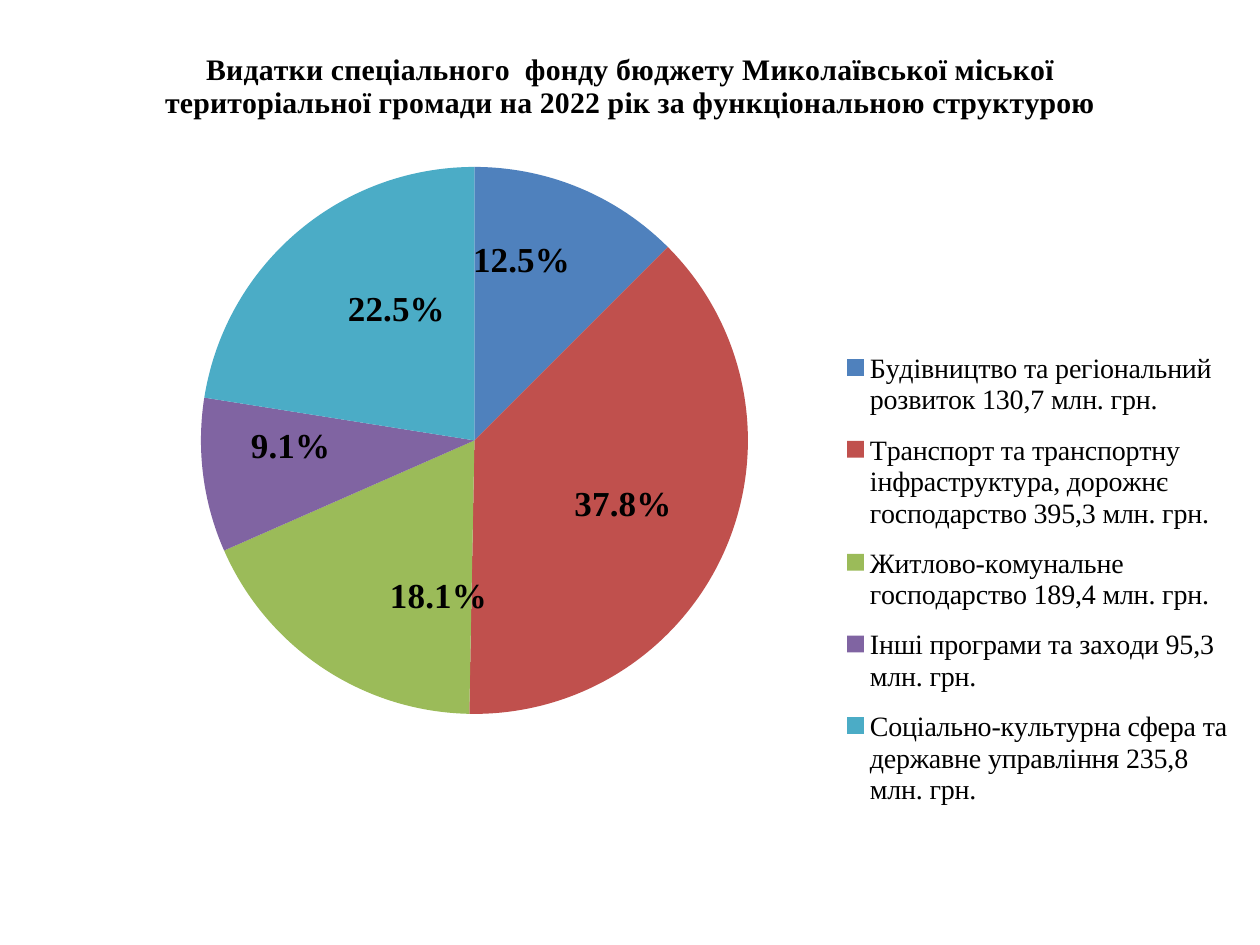
"""Build a slide with a pie chart of special fund spending."""
from dataclasses import dataclass

from lxml import etree
from pptx import Presentation
from pptx import util as u
from pptx.chart import data as chart_data
from pptx.dml import color
from pptx.enum import chart as kinds
from pptx.oxml import ns

EMU_PER_PX = 914400 / 126
SERIF = "Times New Roman"
TITLE = ("Видатки спеціального  фонду бюджету Миколаївської міської "
         "територіальної громади на 2022 рік за функціональною структурою")
COLORS = {
    "text": "000000",
    "construction": "4F81BD",
    "transport": "C0504D",
    "housing": "9BBB59",
    "other": "8064A2",
    "social": "4BACC6",
}


@dataclass(frozen=True)
class Box:
    left: int
    top: int
    width: int
    height: int


@dataclass(frozen=True)
class Sector:
    name: str
    share: float
    fill: str
    shift: tuple[int, int]


CHART = Box(20, 20, 1221, 925)
PLOT = Box(31, 147, 847, 547)
LEGEND = Box(825, 315, 393, 490)
SECTORS = [
    Sector("Будівництво та регіональний розвиток 130,7 млн. грн.",
           12.5, "construction", (-5, -53)),
    Sector("Транспорт та транспортну інфраструктура, дорожнє господарство 395,3 млн. грн.",
           37.8, "transport", (23, 11)),
    Sector("Житлово-комунальне господарство 189,4 млн. грн.",
           18.1, "housing", (40, 42)),
    Sector("Інші програми та заходи 95,3 млн. грн.",
           9.1, "other", (-48, -11)),
    Sector("Соціально-культурна сфера та державне управління 235,8 млн. грн.",
           22.5, "social", (11, -27)),
]


def px(length: int) -> u.Emu:
    """Turn pixels into EMU."""
    return u.Emu(round(length * EMU_PER_PX))


def rgb(name: str) -> color.RGBColor:
    """Look up a named colour."""
    return color.RGBColor.from_string(COLORS[name])


def style(font, size: int, bold: bool = False, face: str = SERIF) -> None:
    """Set the look of a chart font."""
    font.name = face
    font.size = u.Pt(size)
    font.bold = bold
    font.color.rgb = rgb("text")


def place(parent, index: int, settings: dict[str, object]) -> None:
    """Give a chart part a manual layout."""
    for old in parent.findall(ns.qn("c:layout")):
        parent.remove(old)
    layout = etree.Element(ns.qn("c:layout"))
    manual = etree.SubElement(layout, ns.qn("c:manualLayout"))
    for tag, value in settings.items():
        etree.SubElement(manual, ns.qn(f"c:{tag}")).set("val", str(value))
    parent.insert(index, layout)


def frame(box: Box) -> dict[str, object]:
    """Express a box as fractions of the chart area."""
    return {
        "xMode": "edge", "yMode": "edge",
        "x": round(box.left / CHART.width, 4),
        "y": round(box.top / CHART.height, 4),
        "w": round(box.width / CHART.width, 4),
        "h": round(box.height / CHART.height, 4),
    }


def draw_sector(point, sector: Sector) -> None:
    """Colour one sector and set its percentage label."""
    point.format.fill.solid()
    point.format.fill.fore_color.rgb = rgb(sector.fill)
    label = point.data_label
    style(label.font, 20, bold=True)
    label.position = kinds.XL_LABEL_POSITION.CENTER
    node = label.font._element.getparent()
    while node.tag != ns.qn("c:dLbl"):
        node = node.getparent()
    node.find(ns.qn("c:showVal")).set("val", "0")
    node.find(ns.qn("c:showPercent")).set("val", "1")
    across, down = sector.shift
    place(node, 1, {"x": round(across / CHART.width, 4),
                    "y": round(down / CHART.height, 4)})
    number = etree.Element(ns.qn("c:numFmt"))
    number.set("formatCode", "0.0%")
    number.set("sourceLinked", "0")
    node.insert(2, number)


def draw_title(chart) -> None:
    """Write the chart title over the plot."""
    chart.has_title = True
    para = chart.chart_title.text_frame.paragraphs[0]
    span = para.add_run()
    span.text = TITLE
    style(span.font, 17, bold=True)
    chart.chart_title._element.get_or_add_overlay().set("val", "1") if hasattr(
        chart.chart_title._element, "get_or_add_overlay") else None


def draw_chart(page) -> None:
    """Add the pie chart with its title, labels and legend."""
    shares = chart_data.CategoryChartData()
    shares.categories = [sector.name for sector in SECTORS]
    shares.add_series("Series 1", [sector.share for sector in SECTORS])
    chart = page.shapes.add_chart(
        kinds.XL_CHART_TYPE.PIE, px(CHART.left), px(CHART.top),
        px(CHART.width), px(CHART.height), shares).chart
    style(chart.font, 10, face="Calibri")
    draw_title(chart)

    plot = chart.plots[0]
    plot.vary_by_categories = True
    series = plot.series[0]
    for index, sector in enumerate(SECTORS):
        draw_sector(series.points[index], sector)
    labels = series.data_labels
    labels.show_value = False
    labels.show_percentage = True
    labels.number_format = "0.0%"
    labels.number_format_is_linked = False
    style(labels.font, 20, bold=True)
    area = chart._chartSpace.chart.plotArea
    place(area, 0, {"layoutTarget": "inner", **frame(PLOT)})

    chart.has_legend = True
    legend = chart.legend
    legend.position = kinds.XL_LEGEND_POSITION.RIGHT
    legend.include_in_layout = False
    style(legend.font, 16)
    place(legend._element, 1, frame(LEGEND))


def main() -> None:
    """Create the deck and save it."""
    deck = Presentation()
    deck.slide_width = px(1260)
    deck.slide_height = px(945)
    page = deck.slides.add_slide(deck.slide_layouts[6])
    draw_chart(page)
    deck.save("out.pptx")


if __name__ == "__main__":
    main()
